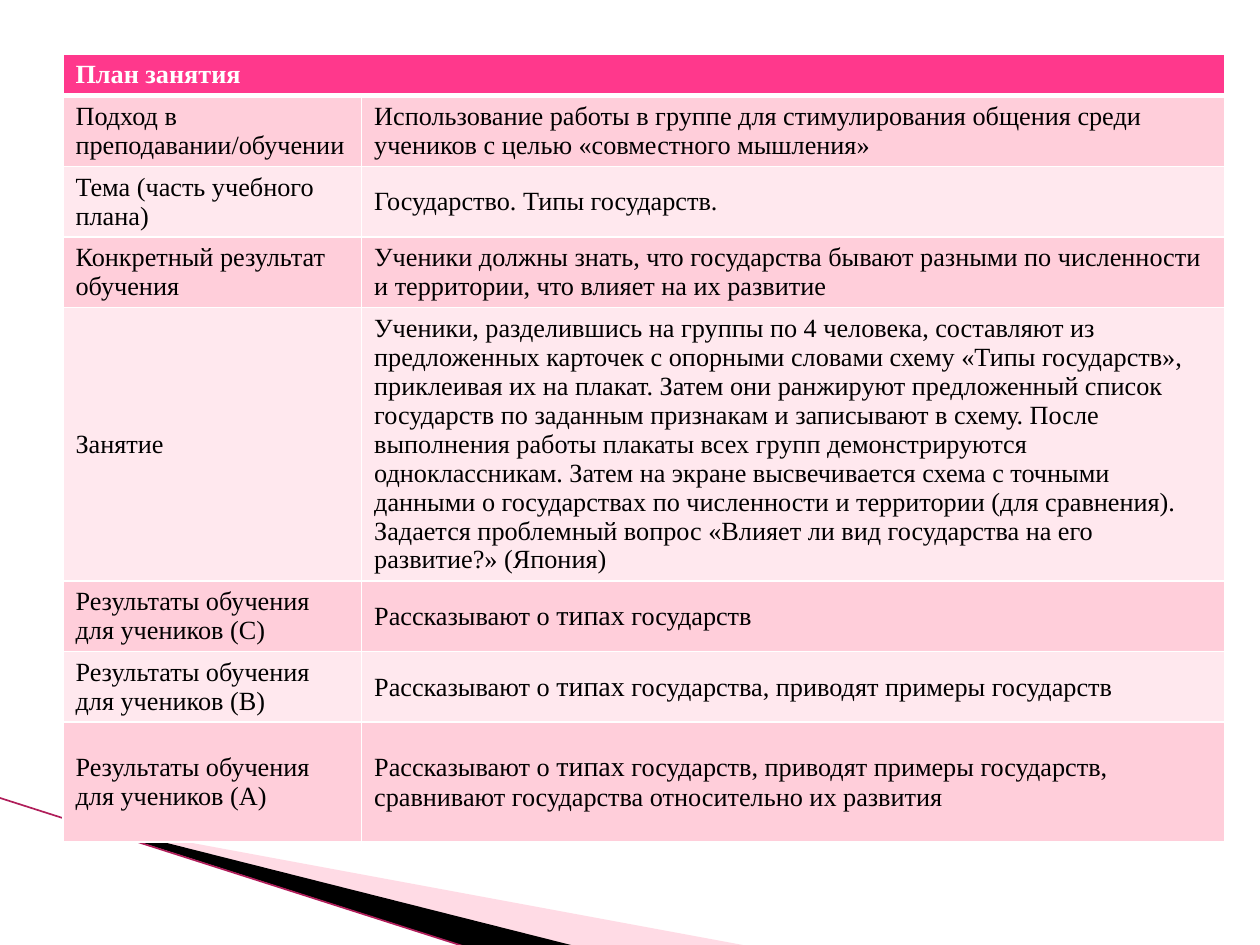
"""Build the lesson plan slide: one table over a slanted corner ornament."""
from lxml import etree
from pptx import Presentation
from pptx import util as u
from pptx.dml.color import RGBColor
from pptx.enum import shapes, text
from pptx.oxml import ns

HEADING = "План занятия"
PLAN = [
    ("Подход в преподавании/обучении",
     ["Использование работы в группе для стимулирования общения среди учеников "
      "с целью «совместного мышления»"]),
    ("Тема (часть учебного плана)", ["Государство. Типы государств."]),
    ("Конкретный результат обучения",
     ["Ученики должны знать, что государства бывают разными по численности и территории, "
      "что влияет на их развитие"]),
    ("Занятие",
     ["Ученики, разделившись на группы по 4 человека, составляют из предложенных карточек "
      "с опорными словами схему «Типы государств», приклеивая их на плакат. Затем они "
      "ранжируют предложенный список государств по заданным признакам и записывают в схему. "
      "После выполнения работы плакаты всех групп демонстрируются одноклассникам. Затем на "
      "экране высвечивается схема с точными данными о государствах по численности и "
      "территории (для сравнения). Задается проблемный вопрос «Влияет ли вид государства "
      "на его развитие?» (Япония)"]),
    ("Результаты обучения для учеников (С)",
     ["Рассказывают о ", "типах", " государств"]),
    ("Результаты обучения для учеников (В)",
     ["Рассказывают о ", "типах", " государства, приводят примеры государств"]),
    ("Результаты обучения для учеников (А)",
     ["Рассказывают о ", "типах", " государств, приводят примеры государств, "
      "сравнивают государства относительно их развития"]),
]
COLUMNS = [2.37, 6.85]
ROWS = [0.32, 0.56, 0.56, 0.56, 2.17, 0.56, 0.56, 0.95]
COLORS = {"heading": "FF388C", "odd": "FFCEDA", "even": "FFE8EE", "white": "FFFFFF",
          "black": "000000", "glow": "FFA5BF", "edge": "B01E5A"}
BANDS = [
    ("glow", 40, [(0.55, 6.51), (5.95, 7.51), (4.56, 7.51), (0.55, 6.5)]),
    ("black", 100, [(0.53, 6.49), (4.57, 7.51), (3.72, 7.52), (0.54, 6.5)]),
]
EDGE = [(-0.01, 6.33), (3.71, 7.52)]


def rgb(name):
    return RGBColor.from_string(COLORS[name])


def add_band(slide, color, opacity, points):
    corners = [(u.Inches(x), u.Inches(y)) for x, y in points]
    builder = slide.shapes.build_freeform(*corners[0])
    builder.add_line_segments(corners[1:], close=True)
    band = builder.convert_to_shape()
    band.shadow.inherit = False
    band.line.fill.background()
    band.fill.solid()
    band.fill.fore_color.rgb = rgb(color)
    if opacity < 100:
        tint = band.fill._xPr.find(".//" + ns.qn("a:srgbClr"))
        etree.SubElement(tint, ns.qn("a:alpha"), val=str(opacity * 1000))


def add_edge(slide):
    ends = [u.Inches(value) for point in EDGE for value in point]
    edge = slide.shapes.add_connector(shapes.MSO_CONNECTOR.STRAIGHT, *ends)
    edge.line.color.rgb = rgb("edge")
    edge.line.width = u.Pt(0.95)
    etree.SubElement(edge._element.spPr, ns.qn("a:effectLst"))


def add_borders(cell, widths):
    properties = cell._tc.get_or_add_tcPr()
    for place, (side, width) in enumerate(widths.items()):
        border = etree.Element(ns.qn("a:ln" + side), w=str(u.Pt(width)))
        fill = etree.SubElement(border, ns.qn("a:solidFill"))
        etree.SubElement(fill, ns.qn("a:srgbClr"), val=COLORS["white"])
        properties.insert(place, border)


def fill_cell(cell, row, parts):
    cell.vertical_anchor = text.MSO_ANCHOR.MIDDLE
    cell.fill.solid()
    cell.fill.fore_color.rgb = rgb(("odd" if row % 2 else "even") if row else "heading")
    add_borders(cell, {"L": 1, "R": 1, "T": 3 if row == 1 else 1, "B": 1 if row else 3})
    for part, words in enumerate(parts):
        run = cell.text_frame.paragraphs[0].add_run()
        run.text = words
        look = {"name": "Times New Roman", "size": u.Pt(16 if part == 1 else 15),
                "bold": row == 0}
        for key, value in look.items():
            setattr(run.font, key, value)
        run.font.color.rgb = rgb("black" if row else "white")


def add_plan(slide):
    plan = slide.shapes.add_table(
        len(ROWS), len(COLUMNS), u.Inches(0.5), u.Inches(0.43),
        u.Inches(sum(COLUMNS)), u.Inches(sum(ROWS))).table
    for column, width in zip(plan.columns, COLUMNS):
        column.width = u.Inches(width)
    for row, height in zip(plan.rows, ROWS):
        row.height = u.Inches(height)
    plan.cell(0, 0).merge(plan.cell(0, 1))
    for row, (label, parts) in enumerate([(HEADING, [])] + PLAN):
        fill_cell(plan.cell(row, 0), row, [label])
        fill_cell(plan.cell(row, 1), row, parts)


def main():
    deck = Presentation()
    deck.slide_width, deck.slide_height = u.Inches(10), u.Inches(7.5)
    slide = deck.slides.add_slide(deck.slide_layouts[6])
    for band in BANDS:
        add_band(slide, *band)
    add_edge(slide)
    add_plan(slide)
    deck.save("out.pptx")


if __name__ == "__main__":
    main()
